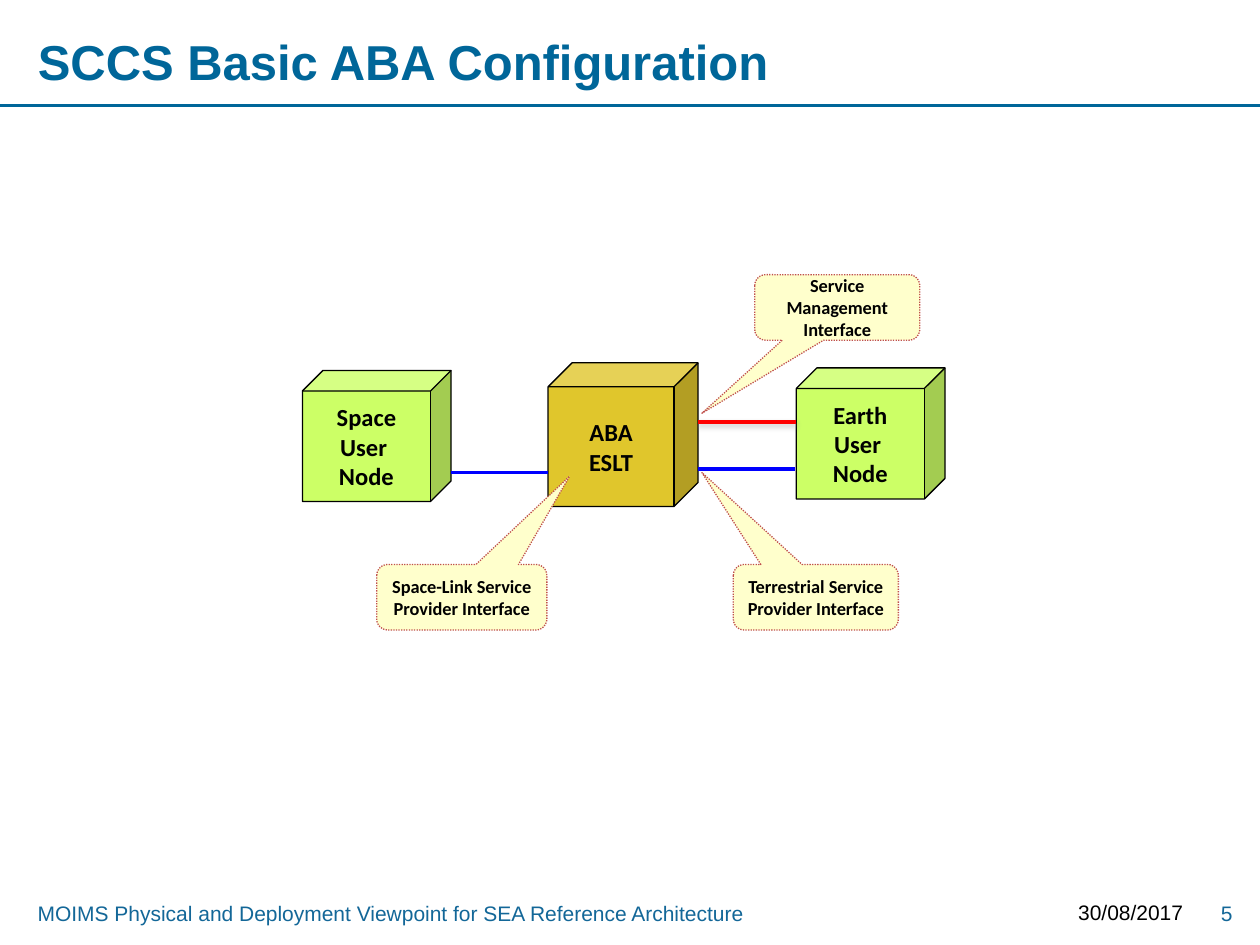
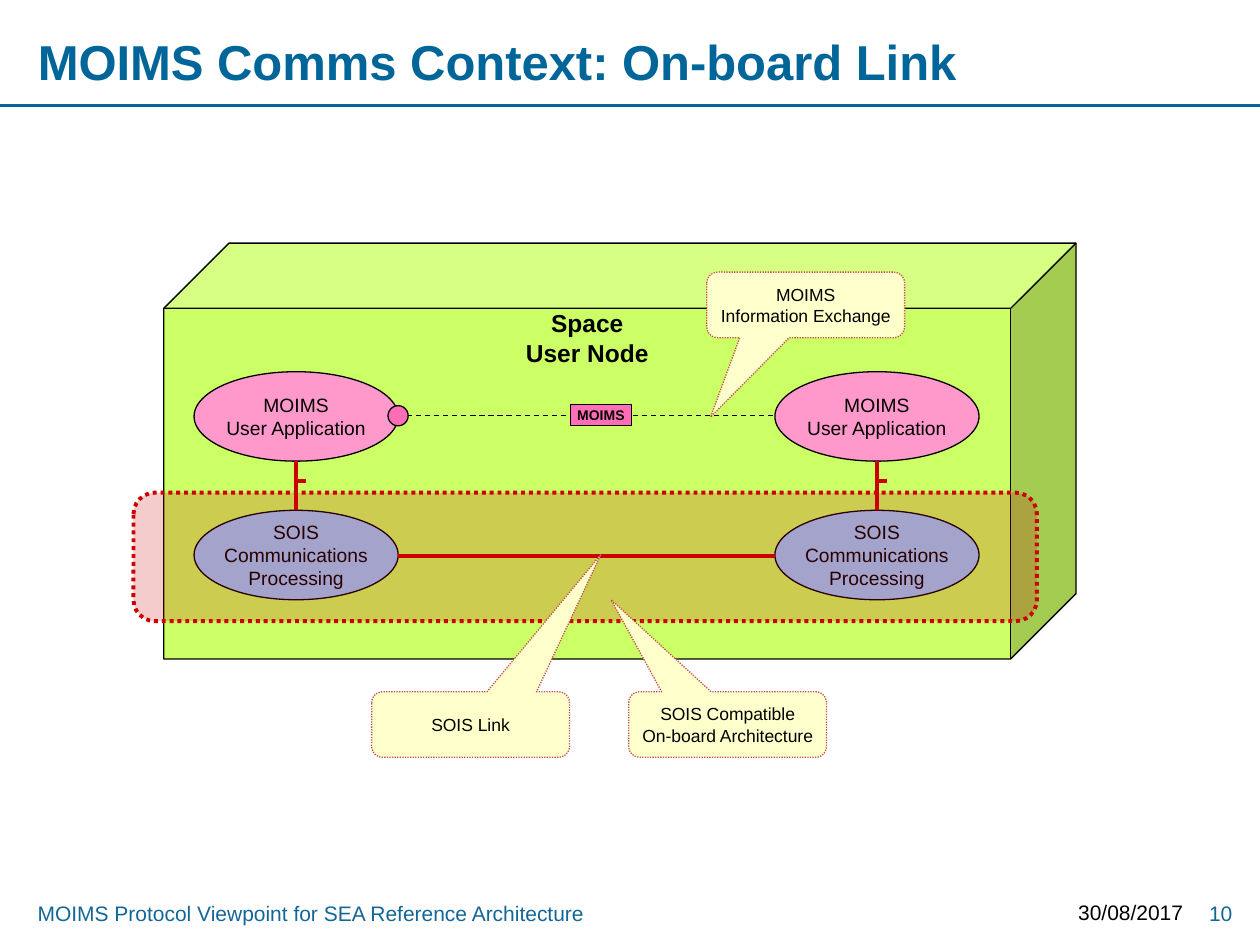
from lxml import etree
from pptx import Presentation
from pptx.dml.color import RGBColor
from pptx.enum.dml import MSO_LINE as DASH
from pptx.enum.shapes import MSO_CONNECTOR as CONN, MSO_SHAPE as SHAPE
from pptx.enum.text import MSO_ANCHOR as ANCHOR, MSO_AUTO_SIZE as FIT, PP_ALIGN as ALIGN
from pptx.oxml.ns import qn
from pptx.util import Inches, Pt

# Colours
TEAL = RGBColor(0x00, 0x66, 0x99)
FOOT = RGBColor(0x13, 0x67, 0x98)
BLACK = RGBColor(0x00, 0x00, 0x00)
GREEN = RGBColor(0xCC, 0xFF, 0x66)
GOLD = RGBColor(0xE0, 0xC6, 0x2C)
CREAM = RGBColor(0xFF, 0xFF, 0xCC)
BRICK = RGBColor(0xC0, 0x50, 0x4D)
BLUE = RGBColor(0x00, 0x00, 0xFF)
RED = RGBColor(0xFF, 0x00, 0x00)
CRIMSON = RGBColor(0xCC, 0x00, 0x00)
SKY = RGBColor(0x99, 0xCC, 0xFF)
PINK = RGBColor(0xFF, 0x99, 0xCC)
ROSE = RGBColor(0xFF, 0x6D, 0xB6)

DATE = "30/08/2017"


def write(frame, text, size=12, font="Arial", color=BLACK, bold=False,
          align=ALIGN.CENTER, anchor=ANCHOR.MIDDLE, pad=(0.1, 0.05), wrap=True):
    """Fill a text frame, one paragraph per line of text."""
    frame.auto_size = FIT.NONE
    frame.word_wrap = wrap
    frame.vertical_anchor = anchor
    frame.margin_left = frame.margin_right = Inches(pad[0])
    frame.margin_top = frame.margin_bottom = Inches(pad[1])
    for i, line in enumerate(text.split("\n")):
        para = frame.add_paragraph() if i else frame.paragraphs[0]
        para.alignment = align
        run = para.add_run()
        run.text = line
        run.font.size = Pt(size)
        run.font.name = font
        run.font.bold = bold
        run.font.color.rgb = color


class Deck:
    def __init__(self):
        self.prs = Presentation()
        self.prs.slide_width = Inches(10)
        self.prs.slide_height = Inches(7.5)
        self.font = "Arial"

    def page(self, title, foot, num, font):
        """Start a slide with its title, rule and footer."""
        self.font = font
        slide = self.prs.slides.add_slide(self.prs.slide_layouts[5])
        self.shapes = slide.shapes
        head = self.shapes.title
        head.left, head.top = Inches(0.2), Inches(0.21)
        head.width, head.height = Inches(7.95), Inches(0.55)
        write(head.text_frame, title, size=28, color=TEAL, bold=True, align=ALIGN.LEFT)
        self.line(0, 0.84, 10, 0.84, TEAL, 1.5)
        self.label(foot, 0.2, 7.1, 8.11, 0.3, color=FOOT, align=ALIGN.LEFT)
        self.label(DATE, 8.39, 7.09, 1.1, 0.32, align=ALIGN.RIGHT)
        self.label(num, 9.41, 7.1, 0.47, 0.3, color=FOOT, align=ALIGN.RIGHT)

    def label(self, text, x, y, w, h, **style):
        box = self.shapes.add_textbox(Inches(x), Inches(y), Inches(w), Inches(h))
        write(box.text_frame, text, anchor=ANCHOR.TOP, **style)

    def line(self, x1, y1, x2, y2, color, width=2.25, dash=None, shade=False):
        link = self.shapes.add_connector(
            CONN.STRAIGHT, Inches(x1), Inches(y1), Inches(x2), Inches(y2))
        link.line.color.rgb = color
        link.line.width = Pt(width)
        if dash:
            link.line.dash_style = dash
        fx = etree.SubElement(link.element.spPr, qn("a:effectLst"))
        if shade:
            drop = etree.SubElement(fx, qn("a:outerShdw"), blurRad=str(Pt(3.1)),
                                    dist=str(Pt(1.6)), dir="5400000", rotWithShape="0")
            tone = etree.SubElement(drop, qn("a:srgbClr"), val="808080")
            etree.SubElement(tone, qn("a:alpha"), val="38000")

    def shape(self, kind, x, y, w, h, fill, text="", edge=BLACK, width=0.75,
              dash=None, alpha=None, adj=(), **style):
        item = self.shapes.add_shape(kind, Inches(x), Inches(y), Inches(w), Inches(h))
        item.shadow.inherit = False
        for i, value in enumerate(adj):
            item.adjustments[i] = value
        item.fill.solid()
        item.fill.fore_color.rgb = fill
        if alpha:
            tone = item.element.spPr.find(qn("a:solidFill"))[0]
            etree.SubElement(tone, qn("a:alpha"), val=str(alpha * 1000))
        item.line.color.rgb = edge
        item.line.width = Pt(width)
        if dash:
            item.line.dash_style = dash
        if text:
            write(item.text_frame, text, font=self.font, **style)

    def cube(self, text, x, y, w, h, fill=GREEN, depth=0.157, **style):
        self.shape(SHAPE.CUBE, x, y, w, h, fill, text, adj=[depth],
                   size=14, bold=True, wrap=False, **style)

    def oval(self, text, x, y, fill):
        self.shape(SHAPE.OVAL, x, y, 1.62, 0.71, fill, text, size=11, pad=(0, 0.05))

    def note(self, text, x, y, w, tip, **style):
        """Callout whose wedge ends at the point tip."""
        h = 0.52
        adj = [(tip[0] - x) / w - 0.5, (tip[1] - y) / h - 0.5, 0.167]
        self.shape(SHAPE.ROUNDED_RECTANGULAR_CALLOUT, x, y, w, h, CREAM, text,
                   edge=BRICK, dash=DASH.ROUND_DOT, adj=adj, pad=(0, 0), **style)


def basic(deck):
    deck.page("SCCS Basic ABA Configuration",
              "MOIMS Physical and Deployment Viewpoint for SEA Reference Architecture",
              "5", "Calibri")
    # Nodes and links
    deck.cube("Space\nUser \nNode", 2.4, 2.94, 1.18, 1.04)
    deck.cube("ABA\nESLT", 4.35, 2.88, 1.19, 1.14, GOLD, 0.167)
    deck.line(5.54, 3.72, 6.31, 3.72, BLUE)
    deck.cube("Earth\nUser \nNode", 6.32, 2.92, 1.18, 1.04)
    deck.line(3.58, 3.75, 4.35, 3.75, BLUE)
    # Interfaces
    for text, x, y, w, tip in (
            ("Terrestrial Service Provider Interface", 5.82, 4.48, 1.31, (5.57, 3.75)),
            ("Space-Link Service Provider Interface", 2.99, 4.48, 1.35, (4.52, 3.78)),
            ("Service\nManagement\nInterface", 5.99, 2.18, 1.31, (5.57, 3.28))):
        deck.note(text, x, y, w, tip, size=10.5, bold=True)
    deck.line(6.32, 3.35, 5.54, 3.35, RED, shade=True)


def onboard(deck):
    deck.page("MOIMS Comms Context: On-board Link",
              "MOIMS Protocol Viewpoint for SEA Reference Architecture", "10", "Arial")
    deck.cube("Space\nUser Node", 1.3, 1.93, 7.24, 3.3, anchor=ANCHOR.TOP, pad=(0.1, 0))
    # Application stacks
    for x in (1.54, 6.15):
        mid = x + 0.81
        deck.oval("SOIS\nCommunications Processing", x, 4.05, SKY)
        deck.oval("MOIMS\nUser Application", x, 2.95, PINK)
        deck.line(mid, 4.05, mid, 3.66, CRIMSON)
        deck.line(mid, 3.82, mid + 0.08, 3.82, CRIMSON)
    # Links between the stacks
    deck.line(3.16, 4.41, 6.15, 4.41, CRIMSON)
    deck.line(3.16, 3.3, 6.15, 3.3, BLACK, 0.75, DASH.DASH)
    deck.note("MOIMS\nInformation Exchange", 5.61, 2.16, 1.57, (5.64, 3.31), size=10)
    deck.shape(SHAPE.OVAL, 3.08, 3.22, 0.16, 0.16, ROSE)
    deck.shape(SHAPE.RECTANGLE, 4.53, 3.21, 0.48, 0.17, ROSE, "MOIMS", size=8,
               bold=True, anchor=ANCHOR.TOP, pad=(0.02, 0.02))
    # Compatible zone and its notes
    deck.shape(SHAPE.ROUNDED_RECTANGLE, 1.06, 3.91, 7.17, 1.02, CRIMSON, edge=CRIMSON,
               width=2.25, dash=DASH.ROUND_DOT, alpha=20)
    deck.note("SOIS Compatible\nOn-board Architecture", 4.99, 5.49, 1.57, (4.85, 4.76), size=10)
    deck.note("SOIS Link", 2.95, 5.49, 1.57, (4.77, 4.4), size=10)


def main():
    deck = Deck()
    basic(deck)
    onboard(deck)
    deck.prs.save("out.pptx")


if __name__ == "__main__":
    main()
